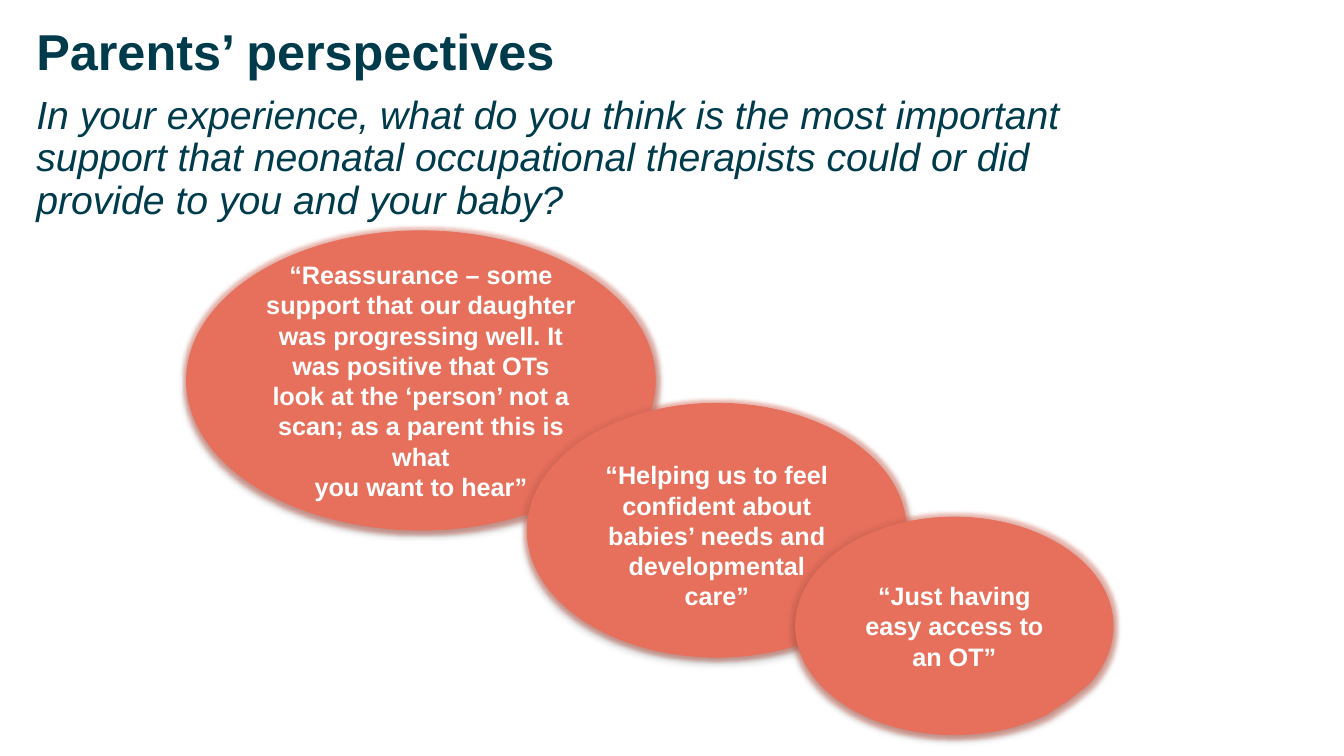
from lxml import etree
from pptx import Presentation
from pptx.dml.color import RGBColor
from pptx.enum.shapes import MSO_SHAPE
from pptx.enum.text import MSO_ANCHOR, MSO_AUTO_SIZE, PP_ALIGN
from pptx.oxml import parse_xml
from pptx.util import Inches, Pt

CALLOUT = MSO_SHAPE.OVAL_CALLOUT
TOP, MIDDLE = MSO_ANCHOR.TOP, MSO_ANCHOR.MIDDLE
LEFT, CENTER = PP_ALIGN.LEFT, PP_ALIGN.CENTER
TITLE_ONLY = 5
FONT = "Arial"
COLORS = {"heading": "003B4C", "bubble": "E7705D", "quote": "FFFFFF", "shadow": "000000"}
A_NS = "http://schemas.openxmlformats.org/drawingml/2006/main"

HEADING = "Parents’ perspectives"
QUESTION = (
    "In your experience, what do you think is the most important support that "
    "neonatal occupational therapists could or did provide to you and your baby?"
)

# box (left, top, width, height), tail point, top inset, paragraphs
QUOTES = [
    ((1.85, 2.29, 4.65, 2.97), (0.53, 0.37), 0.05, [
        "“Reassurance – some support that our daughter was progressing well. It was "
        "positive that OTs look at the ‘person’ not a scan; as a parent this is what",
        "you want to hear”",
    ]),
    ((5.23, 4, 3.76, 2.52), (0.54, 0.63), 0.15, [
        "“Helping us to feel confident about babies’ needs and developmental",
        "care”",
    ]),
    ((7.89, 5.13, 3.15, 2.16), (0.36, 0.34), 0.05, [
        "“Just having easy access to an OT”",
    ]),
]


def rgb(name):
    return RGBColor.from_string(COLORS[name])


def add_run(p, text, size, color, bold=False, italic=False):
    r = p.add_run()
    r.text = text
    r.font.name = FONT
    r.font.size = Pt(size)
    r.font.bold = bold
    r.font.italic = italic
    r.font.color.rgb = rgb(color)


def add_heading(s, box):
    title = s.shapes.title
    title.left, title.top, title.width, title.height = map(Inches, box)
    tf = title.text_frame
    tf.word_wrap = True
    tf.auto_size = MSO_AUTO_SIZE.NONE
    tf.vertical_anchor = TOP
    tf.margin_left = tf.margin_top = tf.margin_right = tf.margin_bottom = 0
    heading, question = tf.paragraphs[0], tf.add_paragraph()
    for p, space in ((heading, 0), (question, 10)):
        p.alignment = LEFT
        p.line_spacing = 0.9
        p.space_before = Pt(space)
    add_run(heading, HEADING, 36, "heading", bold=True)
    add_run(question, QUESTION, 28, "heading", italic=True)


def add_halo(sp):
    """Give the shape a soft glow in its own colour and a faint drop shadow."""
    sp.shadow.inherit = False
    effects = sp._element.spPr.find(f"{{{A_NS}}}effectLst")
    effects.append(parse_xml(
        f'<a:glow xmlns:a="{A_NS}" rad="{Pt(5)}"><a:srgbClr val="{COLORS["bubble"]}">'
        '<a:alpha val="40000"/></a:srgbClr></a:glow>'))
    shadow = etree.SubElement(
        effects, f"{{{A_NS}}}outerShdw", blurRad=str(Pt(3.1)), dist=str(Pt(1.8)),
        dir="5400000", rotWithShape="0")
    color = etree.SubElement(shadow, f"{{{A_NS}}}srgbClr", val=COLORS["shadow"])
    etree.SubElement(color, f"{{{A_NS}}}alpha", val="35000")


def add_quote(s, box, tail, top_inset, paragraphs):
    sp = s.shapes.add_shape(CALLOUT, *map(Inches, box))
    sp.adjustments[0], sp.adjustments[1] = tail
    sp.fill.solid()
    sp.fill.fore_color.rgb = rgb("bubble")
    sp.line.color.rgb = rgb("bubble")
    sp.line.width = Pt(0.5)
    add_halo(sp)
    tf = sp.text_frame
    tf.word_wrap = True
    tf.vertical_anchor = MIDDLE
    tf.margin_top = Inches(top_inset)
    for i, text in enumerate(paragraphs):
        p = tf.add_paragraph() if i else tf.paragraphs[0]
        p.alignment = CENTER
        add_run(p, text, 18, "quote", bold=True)


def main():
    prs = Presentation()
    prs.slide_width, prs.slide_height = Inches(13.33), Inches(7.5)
    s = prs.slides.add_slide(prs.slide_layouts[TITLE_ONLY])
    add_heading(s, (0.36, 0.27, 11.22, 2.08))
    for quote in QUOTES:
        add_quote(s, *quote)
    prs.save("out.pptx")


if __name__ == "__main__":
    main()
